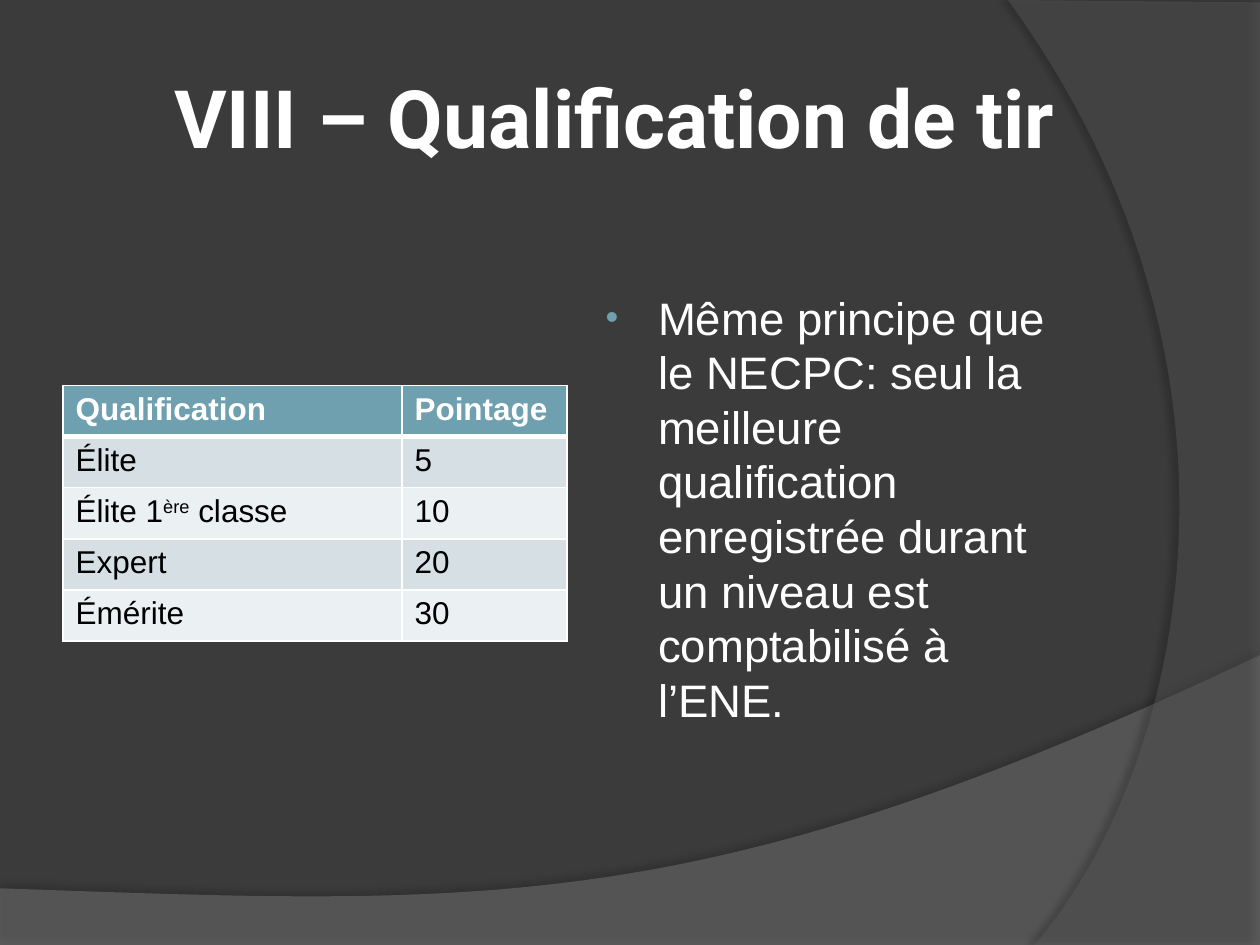
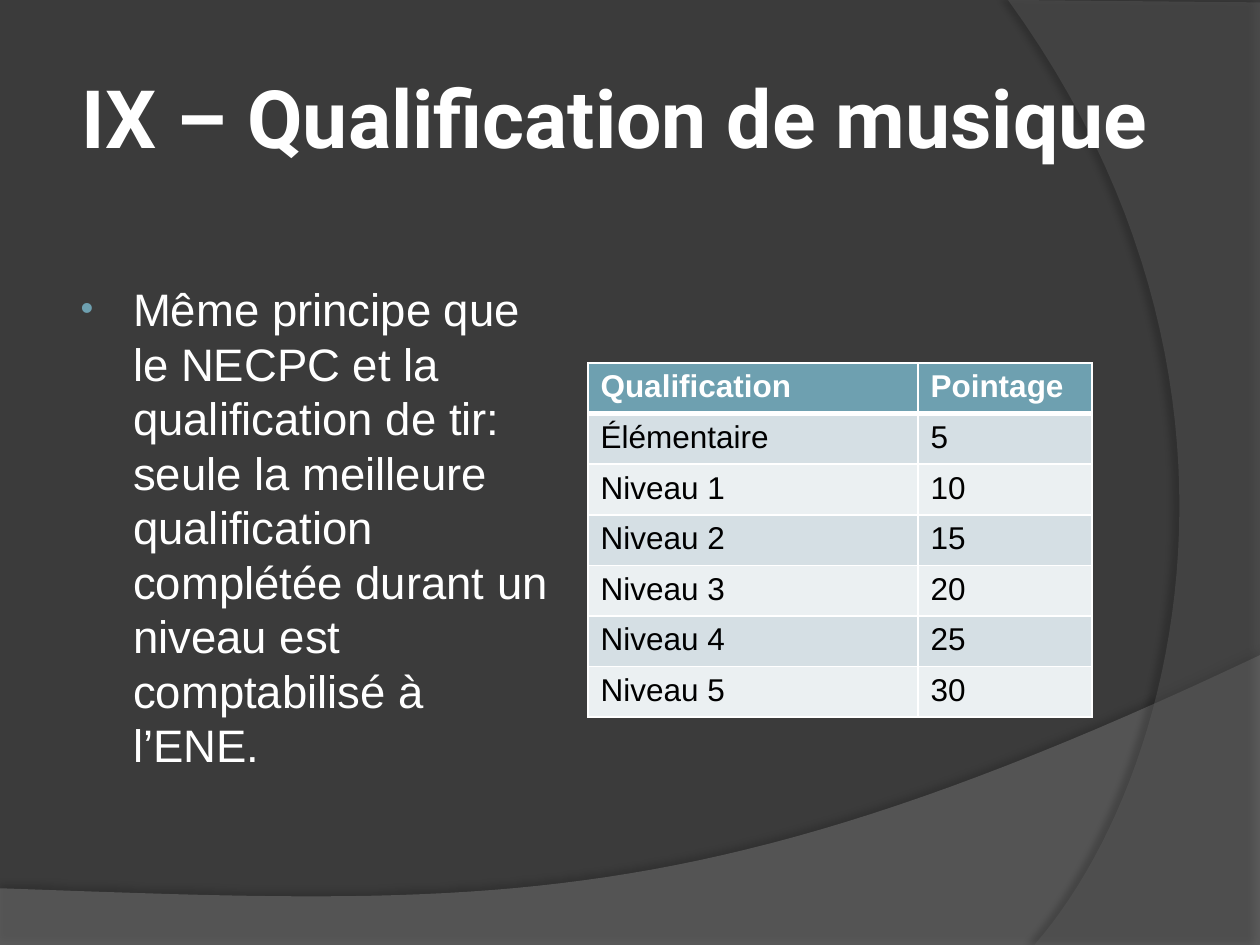
from lxml import etree
from pptx import Presentation
from pptx.dml.color import RGBColor
from pptx.enum.text import MSO_ANCHOR, PP_ALIGN
from pptx.oxml import parse_xml
from pptx.oxml.ns import nsdecls, qn
from pptx.util import Pt

MIDDLE, CENTER = MSO_ANCHOR.MIDDLE, PP_ALIGN.CENTER
WIDE, HIGH = 720, 540
WHITE, BLACK, DARK, TEAL = "FFFFFF", "000000", "3B3B3B", "6EA0B0"
BANDS = "D5DFE4", "EBF0F2"
SANS, HEAD = "Arial", "Roboto"


def color(code):
    return RGBColor.from_string(code)


def style(font, name, size, code, bold=False):
    font.name, font.size, font.bold = name, Pt(size), bold
    font.color.rgb = color(code)


def curve(start, ctrl1, ctrl2, end, steps=48):
    """Points along a cubic curve, without its start."""
    points = []
    for step in range(1, steps + 1):
        t = step / steps
        u = 1 - t
        mix = u ** 3, 3 * u * u * t, 3 * u * t * t, t ** 3
        points.append(tuple(sum(m * p[axis] for m, p in zip(mix, (start, ctrl1, ctrl2, end)))
                            for axis in (0, 1)))
    return points


def add_wave(slide, points, code, alpha, shade, angle, dist):
    pen = slide.shapes.build_freeform(*map(Pt, points[0]), scale=1.0)
    pen.add_line_segments([(Pt(x), Pt(y)) for x, y in points[1:]], close=True)
    wave = pen.convert_to_shape()
    wave.fill.solid()
    wave.fill.fore_color.rgb = color(code)
    wave.line.fill.background()
    wave.shadow.inherit = False
    # Transparency and soft shadow
    props = wave._element.spPr
    tint = props.find(qn("a:solidFill"))[0]
    etree.SubElement(tint, qn("a:alpha")).set("val", str(alpha * 1000))
    props.find(qn("a:effectLst")).append(parse_xml(
        f'<a:outerShdw {nsdecls("a")} blurRad="{Pt(4)}" dist="{Pt(dist)}" '
        f'dir="{angle * 60000}" algn="ctr" rotWithShape="0"><a:srgbClr val="{BLACK}">'
        f'<a:alpha val="{shade * 1000}"/></a:srgbClr></a:outerShdw>'))


def add_back(slide):
    slide.background.fill.solid()
    slide.background.fill.fore_color.rgb = color(DARK)
    # Lower wave
    low = [(0, 507.6), (0, HIGH), (WIDE, HIGH), (WIDE, 374.4)]
    low += curve(low[-1], (402.5, 524.9), (281.5, 517.7), low[0])
    add_wave(slide, low, "7F7F7F", 45, 35, 270, 3.5)
    # Right arc
    side = [(WIDE, 1.4), (WIDE, HIGH), (591.1, HIGH)]
    side += curve(side[-1], (673.2, 445.7), (733, 216), (576, 0))
    add_wave(slide, side, "5E5E5E", 40, 45, 180, 4)


def add_box(slide, box, text):
    frame = slide.shapes.add_textbox(*map(Pt, box)).text_frame
    frame.word_wrap = True
    para = frame.paragraphs[0]
    para.text = text
    return frame, para


def add_title(slide, text):
    frame, para = add_box(slide, (36, 21.6, 630, 90), text)
    frame.vertical_anchor = MIDDLE
    frame.margin_left = frame.margin_right = Pt(3.6)
    para.alignment = CENTER
    style(para.font, HEAD, 46, WHITE, True)


def add_bullet(slide, left, top, text):
    para = add_box(slide, (left, top, 288, 356.4), text)[1]
    # Hanging bullet
    props = para._p.get_or_add_pPr()
    props.set("marL", str(Pt(33)))
    props.set("indent", str(Pt(-30)))
    for part in ('<a:spcBef {}><a:spcPct val="20000"/></a:spcBef>',
                 f'<a:buClr {{}}><a:srgbClr val="{TEAL}"/></a:buClr>',
                 '<a:buSzPct {} val="80000"/>',
                 f'<a:buFont {{}} typeface="{SANS}"/>',
                 '<a:buChar {} char="•"/>'):
        props.append(parse_xml(part.format(nsdecls("a"))))
    style(para.font, SANS, 26, WHITE)


def add_edges(cell, top, bottom):
    props = cell._tc.get_or_add_tcPr()
    for side, width in zip("LRTB", (1, 1, top, bottom)):
        props.append(parse_xml(
            f'<a:ln{side} {nsdecls("a")} w="{Pt(width)}"><a:solidFill>'
            f'<a:srgbClr val="{WHITE}"/></a:solidFill></a:ln{side}>'))


def add_scores(slide, left, top, first, step, scores):
    rows = [("Qualification", "Pointage")] + scores
    table = slide.shapes.add_table(len(rows), 2, Pt(left), Pt(top), Pt(288),
                                   Pt(step * len(rows))).table
    table.columns[0].width, table.columns[1].width = Pt(first), Pt(288 - first)
    for i, row in enumerate(rows):
        table.rows[i].height = Pt(step)
        for j, text in enumerate(row):
            cell = table.cell(i, j)
            add_edges(cell, 3 if i == 1 else 1, 1 if i else 3)
            cell.fill.solid()
            cell.fill.fore_color.rgb = color(BANDS[(i - 1) % 2] if i else TEAL)
            para = cell.text_frame.paragraphs[0]
            style(para.font, SANS, 18, BLACK if i else WHITE, i == 0)
            # Text between carets is raised
            for k, piece in enumerate(text.split("^")):
                run = para.add_run()
                run.text = piece
                if k % 2:
                    run._r.get_or_add_rPr().set("baseline", "30000")


def add_page(deck, title):
    slide = deck.slides.add_slide(deck.slide_layouts[6])
    add_back(slide)
    add_title(slide, title)
    return slide


def main():
    deck = Presentation()
    deck.slide_width, deck.slide_height = Pt(WIDE), Pt(HIGH)

    # Shooting
    slide = add_page(deck, "VIII – Qualification de tir")
    add_scores(slide, 36, 220.3, 193.7, 29.2, [
        ("Élite", "5"), ("Élite 1^ère^ classe", "10"), ("Expert", "20"), ("Émérite", "30")])
    add_bullet(slide, 336, 162, "Même principe que le NECPC: seul la meilleure qualification "
               "enregistrée durant un niveau est comptabilisé à l’ENE.")

    # Music
    slide = add_page(deck, "IX – Qualification de musique")
    add_bullet(slide, 36, 157, "Même principe que le NECPC et la qualification de tir: seule la "
               "meilleure qualification complétée durant un niveau est comptabilisé à l’ENE.")
    levels = [(f"Niveau {n}", str(5 + 5 * n)) for n in range(1, 6)]
    add_scores(slide, 336, 207.5, 188.6, 28.9, [("Élémentaire", "5")] + levels)

    deck.save("out.pptx")


if __name__ == "__main__":
    main()
